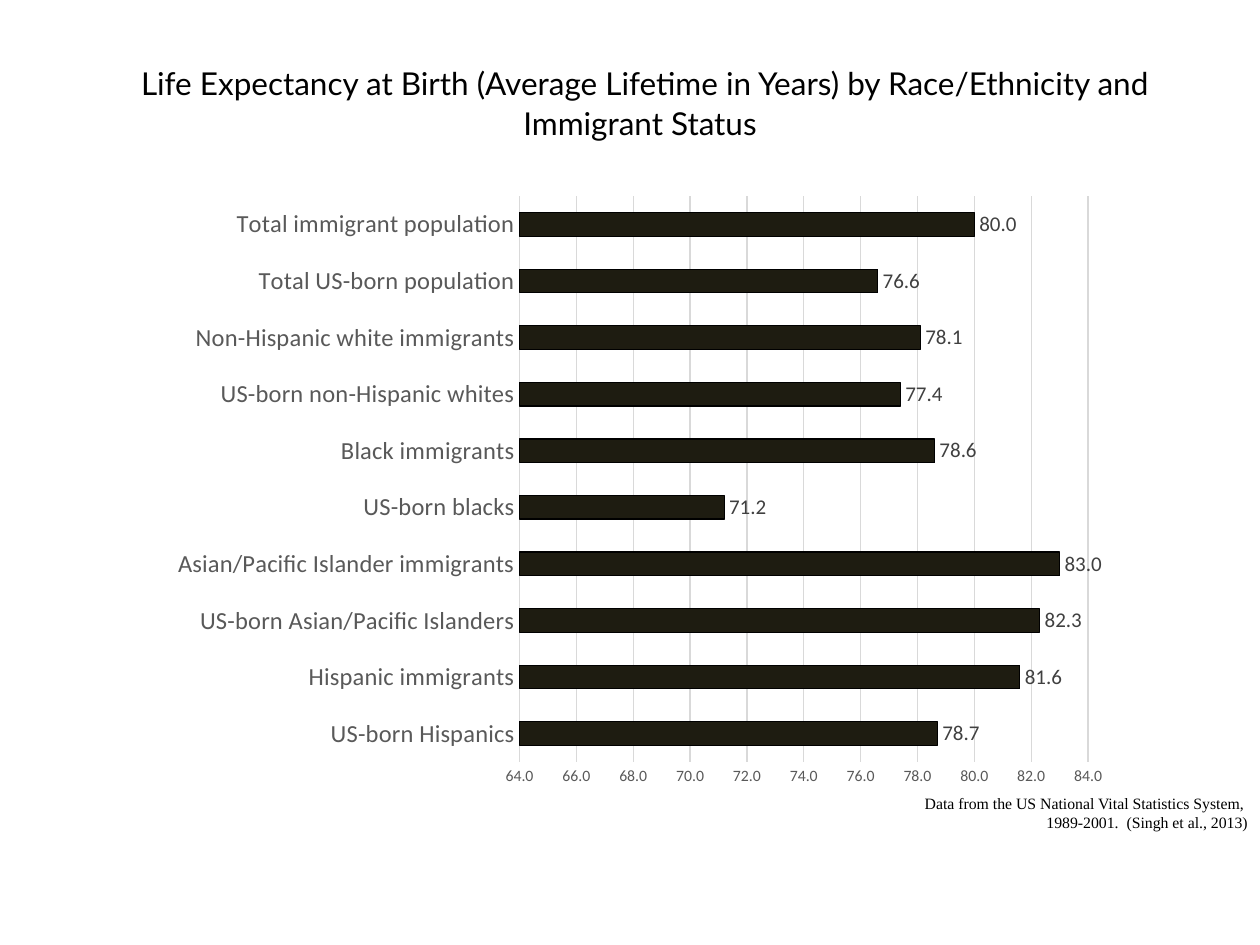
from dataclasses import dataclass

from pptx import Presentation
from pptx import util as u
from pptx.chart import data as chart_data
from pptx.dml.color import RGBColor
from pptx.enum import chart as c, text as t


@dataclass(frozen=True)
class Theme:
    black: str = "000000"
    bar: str = "1E1C11"
    axis_text: str = "595959"
    label_text: str = "404040"
    grid: str = "D9D9D9"
    title_font: str = "Lato"
    chart_font: str = "Calibri"
    source_font: str = "Times New Roman"
    title_lead_size: float = 25.2
    title_size: float = 18
    category_size: float = 14
    label_size: float = 12
    chart_size: float = 10
    small_size: float = 9
    line_width: float = 0.75


LIFE_EXPECTANCY = {
    "US-born Hispanics": 78.7,
    "Hispanic immigrants": 81.6,
    "US-born Asian/Pacific Islanders": 82.3,
    "Asian/Pacific Islander immigrants": 83.0,
    "US-born blacks": 71.2,
    "Black immigrants": 78.6,
    "US-born non-Hispanic whites": 77.4,
    "Non-Hispanic white immigrants": 78.1,
    "Total US-born population": 76.6,
    "Total immigrant population": 80.0,
}


def format_font(font, name, size, color):
    font.name = name
    font.size = u.Pt(size)
    font.bold = False
    font.color.rgb = RGBColor.from_string(color)


def add_text(paragraph, words, *, font, size, color, align):
    paragraph.alignment = align
    run = paragraph.add_run()
    run.text = words
    format_font(run.font, font, size, color)


class SlideBuilder:
    def __init__(self, slide, theme):
        self.slide = slide
        self.theme = theme

    def format_line(self, line, color):
        line.color.rgb = RGBColor.from_string(color)
        line.width = u.Pt(self.theme.line_width)

    def title(self, words, left, top, width, height):
        theme = self.theme
        shape = self.slide.shapes.title
        shape.left, shape.top, shape.width, shape.height = left, top, width, height
        frame = shape.text_frame
        frame.word_wrap = True
        frame.auto_size = t.MSO_AUTO_SIZE.NONE
        frame.vertical_anchor = t.MSO_ANCHOR.MIDDLE
        paragraph = frame.paragraphs[0]
        runs = ((" ", theme.chart_font, theme.title_lead_size),
                (words, theme.title_font, theme.title_size))
        for run_words, font, size in runs:
            add_text(paragraph, run_words, font=font, size=size,
                     color=theme.black, align=t.PP_ALIGN.CENTER)

    def bar_chart(self, values, left, top, width, height):
        theme = self.theme
        data = chart_data.CategoryChartData(number_format="0.0")
        data.categories = list(values)
        data.add_series("Series 1", list(values.values()))
        chart = self.slide.shapes.add_chart(
            c.XL_CHART_TYPE.BAR_CLUSTERED, left, top, width, height, data).chart
        chart.has_legend = False
        chart.has_title = False
        format_font(chart.font, theme.chart_font, theme.chart_size, theme.black)

        axes = ((chart.category_axis, theme.category_size),
                (chart.value_axis, theme.small_size))
        for axis, size in axes:
            axis.major_tick_mark = axis.minor_tick_mark = c.XL_TICK_MARK.NONE
            format_font(axis.tick_labels.font, theme.chart_font, size, theme.axis_text)
        self.format_line(chart.category_axis.format.line, theme.grid)

        value_axis = chart.value_axis
        value_axis.minimum_scale, value_axis.maximum_scale = 64, 84
        value_axis.major_unit = 2
        value_axis.format.line.fill.background()
        self.format_line(value_axis.major_gridlines.format.line, theme.grid)
        value_axis.tick_labels.number_format = "0.0"
        value_axis.tick_labels.number_format_is_linked = False

        plot = chart.plots[0]
        plot.gap_width = 140
        plot.vary_by_categories = False
        bars = plot.series[0]
        bars.format.fill.solid()
        bars.format.fill.fore_color.rgb = RGBColor.from_string(theme.bar)
        self.format_line(bars.format.line, theme.black)

        labels = bars.data_labels
        labels.show_value = True
        labels.position = c.XL_LABEL_POSITION.OUTSIDE_END
        labels.number_format = "0.0"
        labels.number_format_is_linked = False
        format_font(labels.font, theme.chart_font, theme.label_size, theme.label_text)

    def source_note(self, lines, left, top, width, height):
        frame = self.slide.shapes.add_textbox(left, top, width, height).text_frame
        frame.word_wrap = True
        frame.auto_size = t.MSO_AUTO_SIZE.SHAPE_TO_FIT_TEXT
        for index, line in enumerate(lines):
            paragraph = frame.add_paragraph() if index else frame.paragraphs[0]
            add_text(paragraph, line, font=self.theme.source_font,
                     size=self.theme.small_size, color=self.theme.black,
                     align=t.PP_ALIGN.RIGHT)


def main():
    presentation = Presentation()
    presentation.slide_width = u.Inches(10)
    presentation.slide_height = u.Inches(7.5)
    title_only = presentation.slide_layouts[5]
    builder = SlideBuilder(presentation.slides.add_slide(title_only), Theme())

    builder.title(
        "Life Expectancy at Birth (Average Lifetime in Years) "
        "by Race/Ethnicity and Immigrant Status",
        u.Inches(0.58), u.Inches(0.48), u.Inches(9), u.Inches(0.57))
    builder.bar_chart(LIFE_EXPECTANCY, u.Inches(1.26), u.Inches(1.46),
                      u.Inches(7.64), u.Inches(4.87))
    builder.source_note(
        ["Data from the US National Vital Statistics System, ",
         "1989-2001.  (Singh et al., 2013)"],
        u.Inches(6.49), u.Inches(6.25), u.Inches(3.51), u.Inches(0.4))
    presentation.save("out.pptx")


if __name__ == "__main__":
    main()
